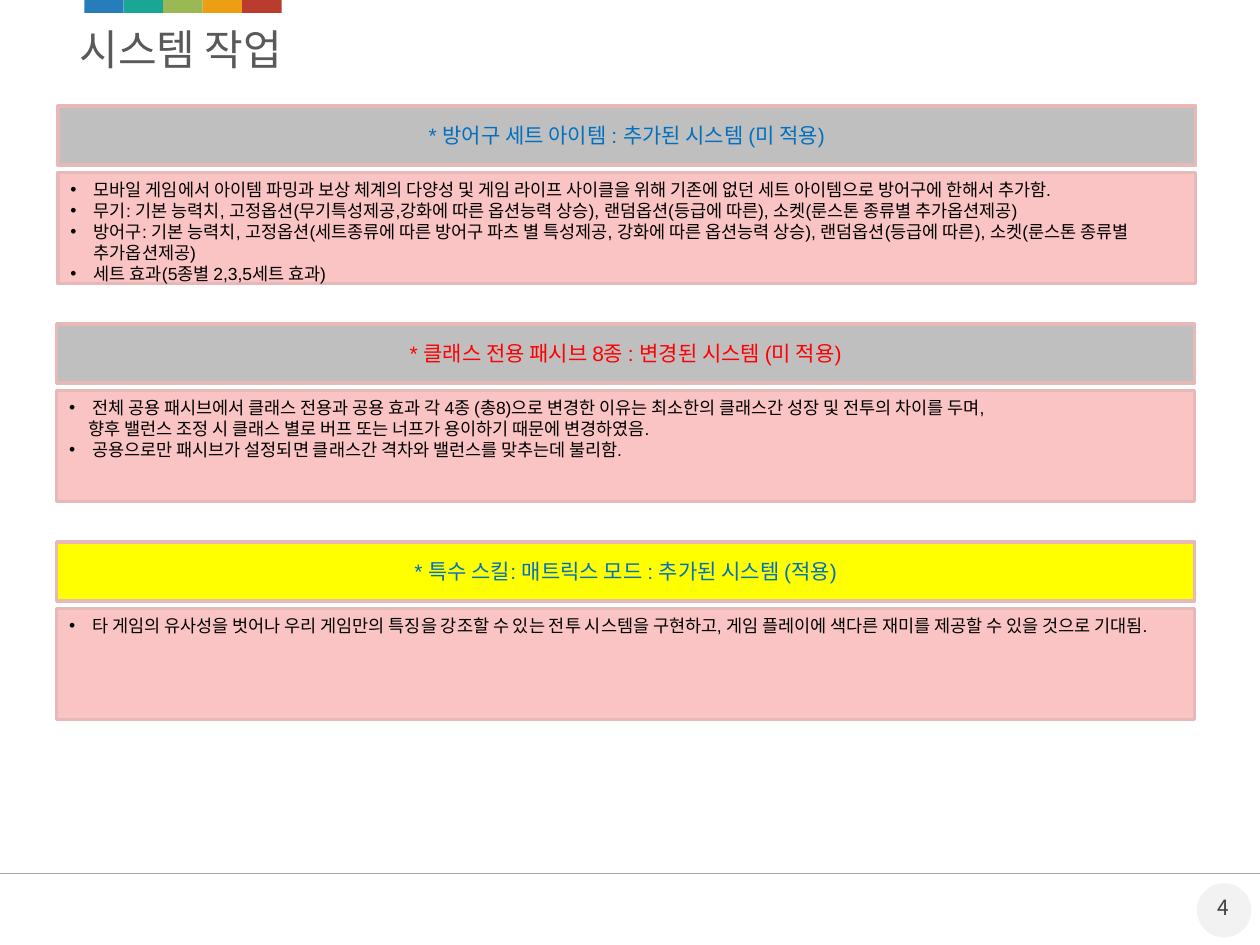
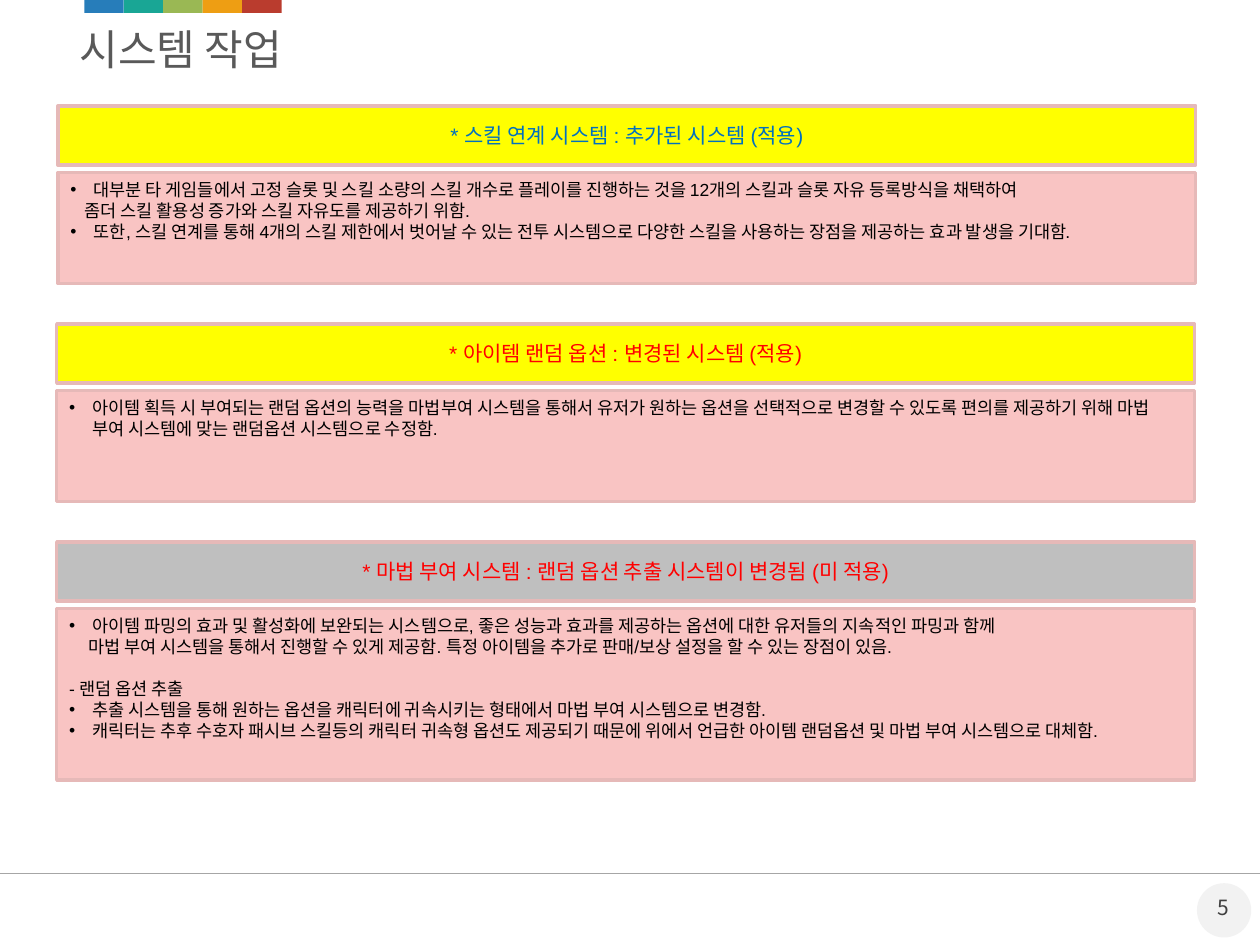
"""Build two slides listing the status of each game system."""
from typing import Any, NamedTuple

from lxml import etree
from pptx import Presentation
from pptx import util as u
from pptx.dml.color import RGBColor
from pptx.enum import shapes, text
from pptx.oxml.ns import qn

BLUE, RED = "0070C0", "FF0000"
DONE, PENDING = "FFFF00", "BFBFBF"
PANEL, BORDER = "F9C4C3", "E6B9B8"
STRIPES = ["277DBA", "19A695", "9AB854", "EE9E13", "BA3C2E"]
STRIPE_W = 22.55
SLIDE_W, SLIDE_H = 720, 540
SECTION_TOP, SECTION_STEP, SECTION_W = 60.5, 124.55, 650.2
HEADER_H, LIST_OFFSET = 33.85, 38.15
HANG = 13.5

NO_INSETS = dict(margin_left=0, margin_right=0, margin_top=0, margin_bottom=0)
TITLE_FRAME = dict(margin_left=0, margin_right=u.Pt(7.2), margin_top=u.Pt(3.6),
                   margin_bottom=u.Pt(3.6), word_wrap=True,
                   auto_size=text.MSO_AUTO_SIZE.NONE,
                   vertical_anchor=text.MSO_ANCHOR.MIDDLE)
HEADER_FRAME = dict(word_wrap=True, vertical_anchor=text.MSO_ANCHOR.MIDDLE)
LIST_FRAME = dict(word_wrap=True, vertical_anchor=text.MSO_ANCHOR.TOP)
NUMBER_FRAME = dict(NO_INSETS, word_wrap=False,
                    vertical_anchor=text.MSO_ANCHOR.MIDDLE)
TITLE_FONT = dict(name="Arial", size=u.Pt(24), bold=False)
HEADER_FONT = dict(name="Arial", size=u.Pt(12))
LIST_FONT = dict(name="Arial", size=u.Pt(10))
NUMBER_FONT = dict(name="Noto Sans CJK KR", size=u.Pt(12))
LEFT, CENTER = text.PP_ALIGN.LEFT, text.PP_ALIGN.CENTER


class Box(NamedTuple):
    """Position and size in points."""
    x: float
    y: float
    w: float
    h: float


class Line(NamedTuple):
    """One list paragraph; indent and gap in points."""
    words: str
    bullet: bool = True
    indent: float = HANG
    before: float = 0


class Section(NamedTuple):
    """A header bar with the list panel beneath it."""
    heading: str
    status: str
    colour: str
    lines: list[Line]
    x: float = 32.4
    list_h: float = 63.35


class Page(NamedTuple):
    """One slide."""
    number: int
    title: str
    sections: list[Section]


PAGES = [
    Page(4, "시스템 작업", [
        Section("* 방어구 세트 아이템 : 추가된 시스템 (미 적용)", PENDING, BLUE, [
            Line("모바일 게임에서 아이템 파밍과 보상 체계의 다양성 및 게임 라이프 사이클을 위해 "
                 "기존에 없던 세트 아이템으로 방어구에 한해서 추가함."),
            Line("무기: 기본 능력치, 고정옵션(무기특성제공,강화에 따른 옵션능력 상승), "
                 "랜덤옵션(등급에 따른), 소켓(룬스톤 종류별 추가옵션제공)"),
            Line("방어구: 기본 능력치, 고정옵션(세트종류에 따른 방어구 파츠 별 특성제공, "
                 "강화에 따른 옵션능력 상승), 랜덤옵션(등급에 따른), "
                 "소켓(룬스톤 종류별 추가옵션제공)"),
            Line("세트 효과(5종별 2,3,5세트 효과)"),
        ], x=33.1),
        Section("* 클래스 전용 패시브 8종 : 변경된 시스템 (미 적용)", PENDING, RED, [
            Line("전체 공용 패시브에서 클래스 전용과 공용 효과 각 4종 (총8)으로 변경한 이유는 "
                 "최소한의 클래스간 성장 및 전투의 차이를 두며,"),
            Line("향후 밸런스 조정 시 클래스 별로 버프 또는 너프가 용이하기 때문에 변경하였음.",
                 bullet=False, indent=11.1),
            Line("공용으로만 패시브가 설정되면 클래스간 격차와 밸런스를 맞추는데 불리함."),
        ]),
        Section("* 특수 스킬: 매트릭스 모드 : 추가된 시스템 (적용)", DONE, BLUE, [
            Line("타 게임의 유사성을 벗어나 우리 게임만의 특징을 강조할 수 있는 전투 시스템을 "
                 "구현하고, 게임 플레이에 색다른 재미를 제공할 수 있을 것으로 기대됨."),
        ]),
    ]),
    Page(5, "시스템 작업", [
        Section("* 스킬 연계 시스템 : 추가된 시스템 (적용)", DONE, BLUE, [
            Line("대부분 타 게임들에서 고정 슬롯 및 스킬 소량의 스킬 개수로 플레이를 진행하는 것을 "
                 "12개의 스킬과 슬롯 자유 등록방식을 채택하여"),
            Line("좀더 스킬 활용성 증가와 스킬 자유도를 제공하기 위함.",
                 bullet=False, indent=8.35),
            Line("또한, 스킬 연계를 통해 4개의 스킬 제한에서 벗어날 수 있는 전투 시스템으로 "
                 "다양한 스킬을 사용하는 장점을 제공하는 효과 발생을 기대함."),
        ], x=33.1),
        Section("* 아이템 랜덤 옵션 : 변경된 시스템 (적용)", DONE, RED, [
            Line("아이템 획득 시 부여되는 랜덤 옵션의 능력을 마법부여 시스템을 통해서 유저가 원하는 "
                 "옵션을 선택적으로 변경할 수 있도록 편의를 제공하기 위해 마법 부여 시스템에 맞는 "
                 "랜덤옵션 시스템으로 수정함."),
        ]),
        Section("* 마법 부여 시스템 : 랜덤 옵션 추출 시스템이 변경됨 (미 적용)", PENDING, RED, [
            Line("아이템 파밍의 효과 및 활성화에 보완되는 시스템으로, 좋은 성능과 효과를 제공하는 "
                 "옵션에 대한 유저들의 지속적인 파밍과 함께"),
            Line("마법 부여 시스템을 통해서 진행할 수 있게 제공함. 특정 아이템을 추가로 "
                 "판매/보상 설정을 할 수 있는 장점이 있음.", bullet=False, indent=11.1),
            Line("- 랜덤 옵션 추출", bullet=False, indent=0, before=12),
            Line("추출 시스템을 통해 원하는 옵션을 캐릭터에 귀속시키는 형태에서 "
                 "마법 부여 시스템으로 변경함."),
            Line("캐릭터는 추후 수호자 패시브 스킬등의 캐릭터 귀속형 옵션도 제공되기 때문에 "
                 "위에서 언급한 아이템 랜덤옵션 및 마법 부여 시스템으로 대체함."),
        ], list_h=97.9),
    ]),
]


def rgb(value: str) -> RGBColor:
    """Turn a hex string into a colour."""
    return RGBColor.from_string(value)


def apply(target: Any, values: dict[str, Any]) -> None:
    """Set every attribute named in values."""
    for name, value in values.items():
        setattr(target, name, value)


def points(box: Box) -> list[u.Length]:
    """Convert a box to lengths."""
    return [u.Pt(v) for v in box]


def add_box(s: Any, box: Box, fill: str, border: str | None = None,
            kind: Any = shapes.MSO_SHAPE.RECTANGLE) -> Any:
    """Draw a flat filled shape, outlined when a border is given."""
    sp = s.shapes.add_shape(kind, *points(box))
    sp.shadow.inherit = False
    sp.fill.solid()
    sp.fill.fore_color.rgb = rgb(fill)
    if border:
        sp.line.color.rgb = rgb(border)
        sp.line.width = u.Pt(2)
    else:
        sp.line.fill.background()
    return sp


def write(p: Any, words: str, font: dict[str, Any], colour: str, align: Any) -> None:
    """Fill a paragraph with one formatted run."""
    p.alignment = align
    r = p.add_run()
    r.text = words
    apply(r.font, font)
    r.font.color.rgb = rgb(colour)


def set_indent(p: Any, line: Line) -> None:
    """Give a paragraph its margin and, if wanted, a hanging bullet."""
    pPr = p._p.get_or_add_pPr()
    pPr.set("marL", str(u.Pt(line.indent)))
    pPr.set("indent", str(u.Pt(-line.indent if line.bullet else 0)))
    if line.bullet:
        etree.SubElement(pPr, qn("a:buFont"), typeface="Arial")
        etree.SubElement(pPr, qn("a:buChar"), char="•")


def add_frame(s: Any, page: Page) -> None:
    """Draw the title, colour strip, footer rule and page number."""
    title = s.shapes.title
    apply(title, dict(zip(("left", "top", "width", "height"),
                          points(Box(45.4, 0, 671.8, 56.2)))))
    apply(title.text_frame, TITLE_FRAME)
    write(title.text_frame.paragraphs[0], page.title, TITLE_FONT, "595959", LEFT)
    for i, colour in enumerate(STRIPES):
        add_box(s, Box(48.2 + i * STRIPE_W, 0, STRIPE_W, 7.4), colour)
    rule = s.shapes.add_connector(shapes.MSO_CONNECTOR.STRAIGHT, u.Pt(0), u.Pt(499),
                                  u.Pt(SLIDE_W), u.Pt(499))
    rule.line.color.rgb = rgb("A6A6A6")
    rule.line.width = u.Pt(0.25)
    etree.SubElement(rule._element.spPr, qn("a:effectLst"))
    add_box(s, Box(684, 504.7, 31, 31), "F2F2F2", kind=shapes.MSO_SHAPE.OVAL)
    tf = s.shapes.add_textbox(*points(Box(685.4, 508.3, 27.4, 20.2))).text_frame
    apply(tf, NUMBER_FRAME)
    write(tf.paragraphs[0], str(page.number), NUMBER_FONT, "404040", CENTER)


def add_section(s: Any, section: Section, top: float) -> None:
    """Draw a header bar and its list panel."""
    header = add_box(s, Box(section.x, top, SECTION_W, HEADER_H), section.status, BORDER)
    apply(header.text_frame, HEADER_FRAME)
    write(header.text_frame.paragraphs[0], section.heading, HEADER_FONT,
          section.colour, CENTER)
    panel = add_box(s, Box(section.x, top + LIST_OFFSET, SECTION_W, section.list_h),
                    PANEL, BORDER)
    tf = panel.text_frame
    apply(tf, LIST_FRAME)
    for i, line in enumerate(section.lines):
        p = tf.add_paragraph() if i else tf.paragraphs[0]
        if line.before:
            p.space_before = u.Pt(line.before)
        set_indent(p, line)
        write(p, line.words, LIST_FONT, "000000", LEFT)


def main() -> None:
    """Build and save the presentation."""
    prs = Presentation()
    prs.slide_width, prs.slide_height = u.Pt(SLIDE_W), u.Pt(SLIDE_H)
    for page in PAGES:
        s = prs.slides.add_slide(prs.slide_layouts[5])
        add_frame(s, page)
        for i, section in enumerate(page.sections):
            add_section(s, section, SECTION_TOP + i * SECTION_STEP)
    prs.save("out.pptx")


if __name__ == "__main__":
    main()
